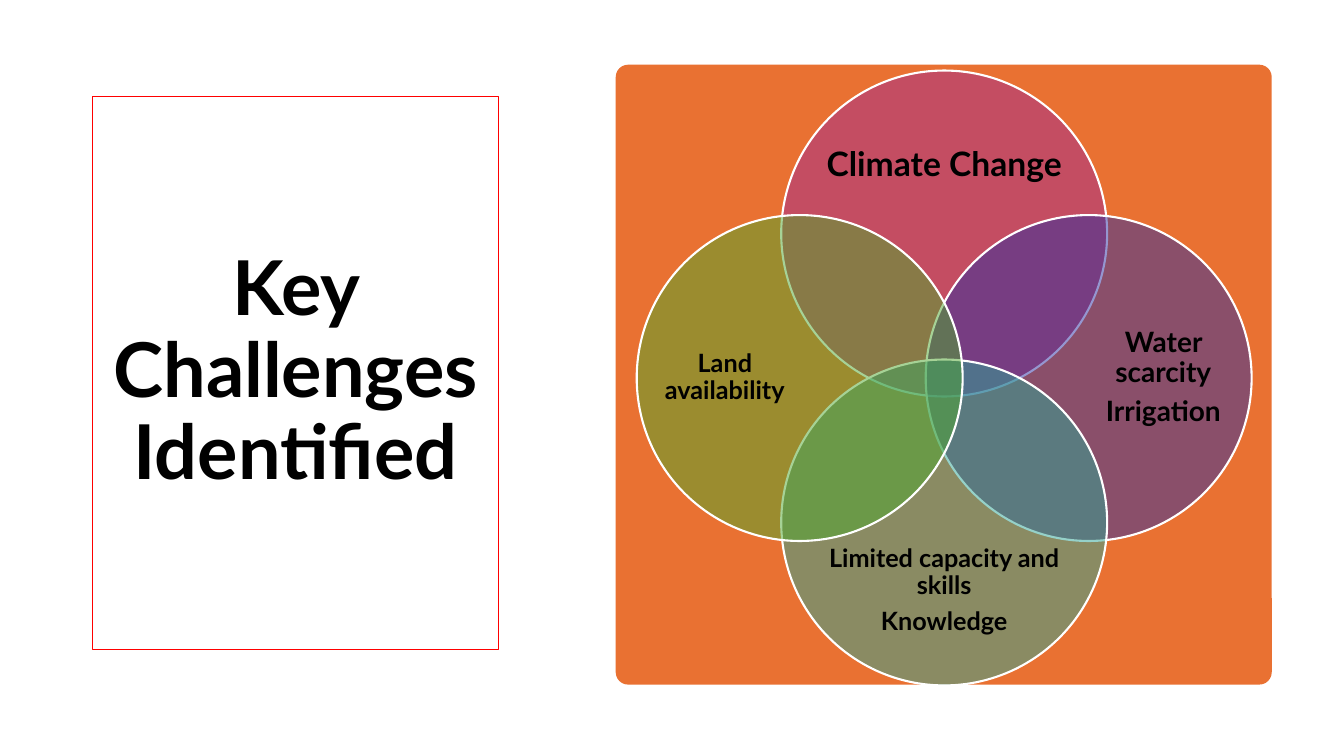
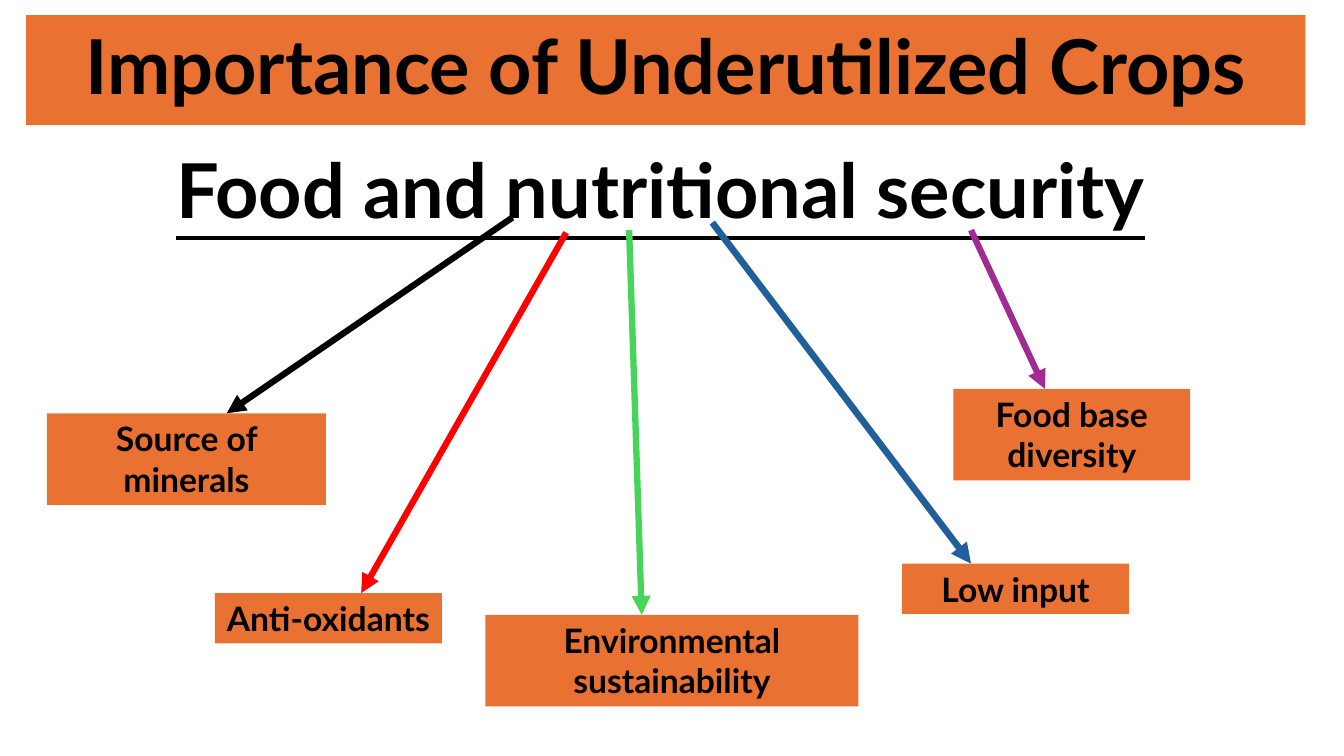
from typing import NamedTuple

from lxml.etree import SubElement as Sub
from pptx import Presentation as Deck
from pptx.dml.color import RGBColor as Rgb
from pptx.enum.shapes import MSO_CONNECTOR as Link, MSO_SHAPE as Kind
from pptx.enum.text import MSO_ANCHOR as Anchor, MSO_AUTO_SIZE as Fit, PP_ALIGN as Align
from pptx.oxml.ns import qn
from pptx.util import Inches, Pt

WIDE, HIGH = Inches(13.33), Inches(7.5)
COLS, ROWS = 160, 90
FONT = "Lato"
BLACK = Rgb(0x00, 0x00, 0x00)
WHITE = Rgb(0xFF, 0xFF, 0xFF)
RED = Rgb(0xFF, 0x00, 0x00)
ORANGE = Rgb(0xE9, 0x71, 0x32)
PURPLE = Rgb(0xA0, 0x2B, 0x93)
INDIGO = Rgb(0x2C, 0x2E, 0xA2)
TEAL = Rgb(0x2D, 0xA5, 0x94)
GREEN = Rgb(0x4E, 0xA7, 0x2E)
LIME = Rgb(0x47, 0xD4, 0x5A)
BLUE = Rgb(0x21, 0x5F, 0x9A)


class Box(NamedTuple):
    left: float
    top: float
    wide: float
    high: float


class Petal(NamedTuple):
    right: int
    down: int
    color: Rgb
    size: int
    lines: list[str]


class Gain(NamedTuple):
    text: str
    box: Box
    color: Rgb
    start: tuple[float, float]
    tip: float
    weight: float = 4.5


HUB = (112.4, 45)
RADIUS = 19.4
STEP = 17.2

PETALS = [
    Petal(0, -1, PURPLE, 24, ["Climate Change"]),
    Petal(1, 0, INDIGO, 20, ["Water scarcity", "Irrigation"]),
    Petal(0, 1, TEAL, 18, ["Limited capacity and skills", "Knowledge"]),
    Petal(-1, 0, GREEN, 18, ["Land availability"]),
]

GAINS = [
    Gain("Source of minerals", Box(5.6, 49.2, 33.2, 10.9), BLACK, (61, 25.9), 27),
    Gain("Environmental sustainability", Box(57.8, 73.2, 44.4, 10.9), LIME, (74.9, 27.4), 76.4),
    Gain("Low input", Box(107.4, 67.1, 27, 6), BLUE, (84.8, 26.5), 115.6, 4.75),
    Gain("Anti-oxidants", Box(25.6, 70.6, 27, 6), RED, (67.4, 27.7), 43),
    Gain("Food base diversity", Box(113.5, 46.3, 28.2, 10.9), PURPLE, (115.6, 27.4), 124.4),
]


def across(col: float) -> int:
    return round(WIDE * col / COLS)


def down(row: float) -> int:
    return round(HIGH * row / ROWS)


def place(box: Box) -> tuple[int, int, int, int]:
    return across(box.left), down(box.top), across(box.wide), down(box.high)


def around(x: float, y: float, wide: float, high: float) -> Box:
    return Box(x - wide / 2, y - high / 2, wide, high)


def write(shape, *lines: str, size: float, anchor=Anchor.MIDDLE, wrap: bool = True,
          space: float = 1, after: float = 0, inset: bool = True, under: bool = False) -> None:
    frame = shape.text_frame
    frame.text = "\n".join(lines)
    frame.auto_size = Fit.NONE
    frame.word_wrap = wrap
    frame.vertical_anchor = anchor
    if not inset:
        frame.margin_left = frame.margin_right = frame.margin_top = frame.margin_bottom = 0
    for para in frame.paragraphs:
        para.alignment = Align.CENTER
        para.line_spacing = space
        para.space_before = Pt(0)
        para.space_after = Pt(after)
        font = para.font
        font.name, font.size, font.bold = FONT, Pt(size), True
        font.underline = under
        font.color.rgb = BLACK


def head(slide, text: str, box: Box, after: float = 0):
    title = slide.shapes.title
    title.left, title.top, title.width, title.height = place(box)
    write(title, text, size=54, space=0.9, after=after)
    return title


def block(slide, kind: Kind, box: Box, color: Rgb):
    shape = slide.shapes.add_shape(kind, *place(box))
    shape.shadow.inherit = False
    shape.fill.solid()
    shape.fill.fore_color.rgb = color
    shape.line.fill.background()
    return shape


def bloom(slide, petal: Petal) -> None:
    x, y = HUB[0] + STEP * petal.right, HUB[1] + STEP * petal.down
    disc = block(slide, Kind.OVAL, around(x, y, 2 * RADIUS, 2 * RADIUS), petal.color)
    fill = disc._element.spPr.find(qn("a:solidFill")).find(qn("a:srgbClr"))
    Sub(fill, qn("a:alpha"), val="50000")
    disc.line.color.rgb = WHITE
    disc.line.width = Pt(1.5)
    wide, high = (15, 29.9) if petal.right else (29.9, 12.4)
    area = around(HUB[0] + 26.1 * petal.right, HUB[1] + 25.3 * petal.down, wide, high)
    label = slide.shapes.add_textbox(*place(area))
    write(label, *petal.lines, size=petal.size, space=0.9, after=6, inset=False)


def arrow(slide, gain: Gain) -> None:
    x, y = gain.start
    line = slide.shapes.add_connector(
        Link.STRAIGHT, across(x), down(y), across(gain.tip), down(gain.box.top))
    line.line.color.rgb = gain.color
    line.line.width = Pt(gain.weight)
    Sub(line.line._get_or_add_ln(), qn("a:tailEnd"), type="triangle")
    Sub(line._element.spPr, qn("a:effectLst"))


def trials(slide) -> None:
    title = head(slide, "Key Challenges Identified", Box(11, 11.5, 48.4, 65.8), after=6)
    title.line.color.rgb = RED
    title.line.width = Pt(0.75)
    panel = block(slide, Kind.ROUNDED_RECTANGLE, Box(73.3, 7.7, 78.1, 73.8), ORANGE)
    panel.adjustments[0] = 0.02
    for petal in PETALS:
        bloom(slide, petal)


def merits(slide) -> None:
    title = head(slide, "Importance of Underutilized Crops", Box(3.1, 1.8, 152.3, 13.1))
    title.fill.solid()
    title.fill.fore_color.rgb = ORANGE
    theme = slide.shapes.add_textbox(*place(Box(18.1, 16.4, 121.1, 12.1)))
    write(theme, "Food and nutritional security", size=54, anchor=Anchor.TOP,
          wrap=False, under=True)
    for gain in GAINS:
        arrow(slide, gain)
    for gain in GAINS:
        label = block(slide, Kind.RECTANGLE, gain.box, ORANGE)
        write(label, gain.text, size=24, anchor=Anchor.TOP)


def main() -> None:
    deck = Deck()
    deck.slide_width, deck.slide_height = WIDE, HIGH
    for draw in (trials, merits):
        draw(deck.slides.add_slide(deck.slide_layouts[5]))
    deck.save("out.pptx")


if __name__ == "__main__":
    main()
